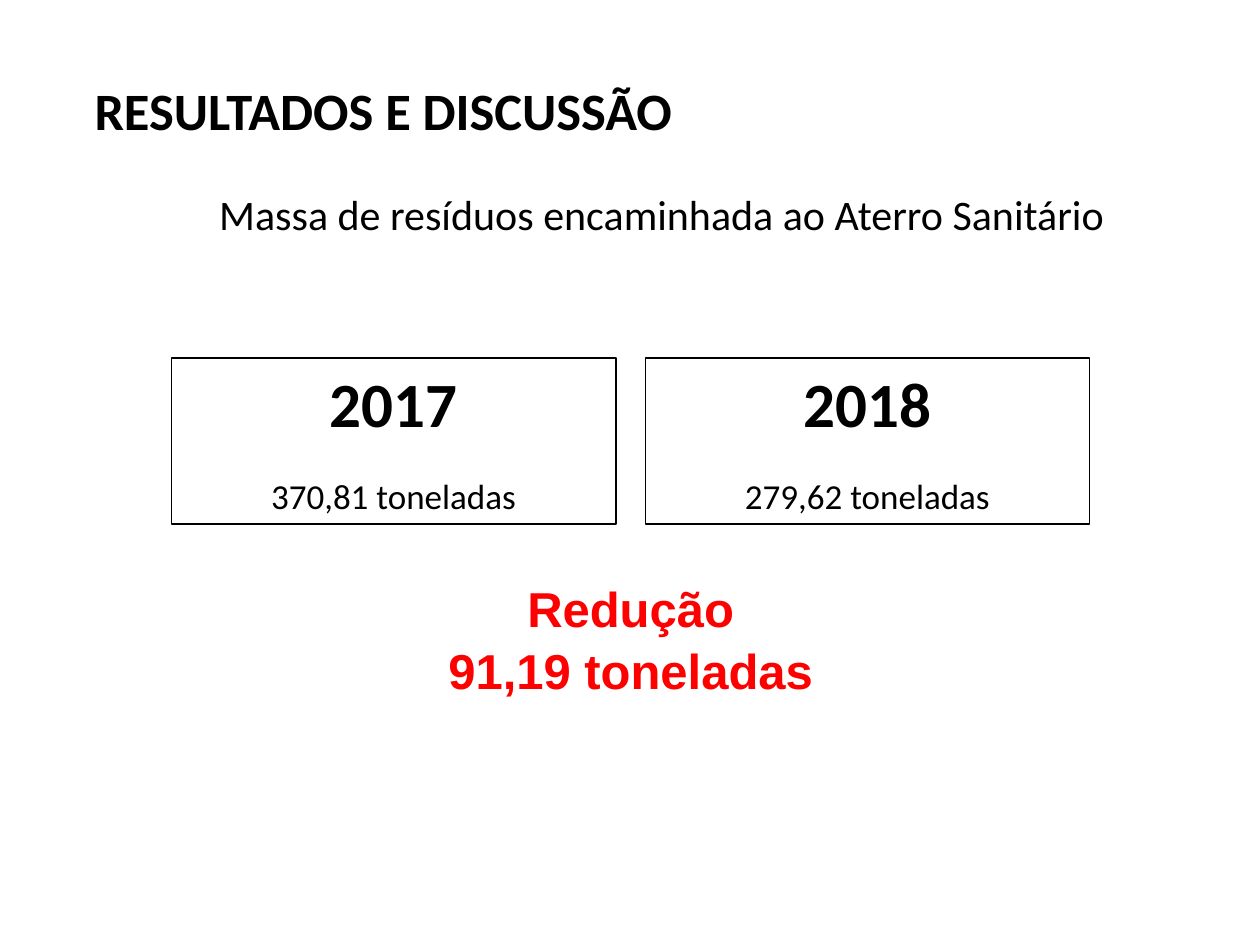
from pptx import Presentation
from pptx.dml.color import RGBColor
from pptx.enum.shapes import MSO_SHAPE
from pptx.enum.text import MSO_ANCHOR, PP_ALIGN
from pptx.util import Pt

BLACK = RGBColor(0x00, 0x00, 0x00)
WHITE = RGBColor(0xFF, 0xFF, 0xFF)
RED = RGBColor(0xFF, 0x00, 0x00)


def add_text(tf, text, first=True, size=24, bold=False, font="Calibri", color=BLACK,
             align=PP_ALIGN.CENTER, before=0, after=0, spacing=1.0):
    """Write one formatted paragraph into a text frame."""
    p = tf.paragraphs[0] if first else tf.add_paragraph()
    p.alignment = align
    p.space_before, p.space_after = Pt(before), Pt(after)
    p.line_spacing = spacing
    r = p.add_run()
    r.text = text
    r.font.name, r.font.size, r.font.bold = font, Pt(size), bold
    r.font.color.rgb = color


def add_box(slide, x, y, w, h):
    """Add a wrapping text box and return its text frame."""
    tf = slide.shapes.add_textbox(Pt(x), Pt(y), Pt(w), Pt(h)).text_frame
    tf.word_wrap = True
    return tf


def add_title(slide, x, y, w, h, text):
    """Place and format the title placeholder."""
    sp = slide.shapes.title
    sp.left, sp.top, sp.width, sp.height = Pt(x), Pt(y), Pt(w), Pt(h)
    sp.text_frame.vertical_anchor = MSO_ANCHOR.MIDDLE
    add_text(sp.text_frame, text, size=30, bold=True, align=PP_ALIGN.LEFT)


def add_subtitle(slide, x, y, w, h, text):
    """Add the centred, indented subtitle."""
    tf = add_box(slide, x, y, w, h)
    tf.margin_left = Pt(43.2)
    add_text(tf, text)


def add_year_card(slide, x, y, w, h, year, mass):
    """Add a framed card with a year above its mass."""
    sp = slide.shapes.add_shape(MSO_SHAPE.RECTANGLE, Pt(x), Pt(y), Pt(w), Pt(h))
    sp.shadow.inherit = False
    sp.fill.solid()
    sp.fill.fore_color.rgb = WHITE
    sp.line.color.rgb = BLACK
    sp.line.width = Pt(0.75)
    tf = sp.text_frame
    tf.word_wrap = True
    tf.vertical_anchor = MSO_ANCHOR.TOP
    add_text(tf, year, size=36, bold=True, after=10)
    add_text(tf, mass, first=False, size=20, before=10)


def add_cards(slide, x, y, w, h, cards, gap):
    """Lay out year cards of equal width in a row."""
    card_w = (w - gap * (len(cards) - 1)) / len(cards)
    for i, (year, mass) in enumerate(cards):
        add_year_card(slide, x + i * (card_w + gap), y, card_w, h, year, mass)


def add_reduction(slide, x, y, w, h, lines):
    """Add the highlighted reduction statement."""
    tf = add_box(slide, x, y, w, h)
    for i, line in enumerate(lines):
        add_text(tf, line, first=i == 0, size=28, bold=True, font="Arial",
                 color=RED, spacing=1.05)


def main():
    """Build and save the slide."""
    prs = Presentation()
    prs.slide_width, prs.slide_height = Pt(720), Pt(540)
    slide = prs.slides.add_slide(prs.slide_layouts[5])
    add_title(slide, 46.8, 40.3, 626.4, 44.6, "RESULTADOS E DISCUSSÃO")
    add_subtitle(slide, 54, 104.4, 612, 315.4,
                 "Massa de resíduos encaminhada ao Aterro Sanitário")
    add_cards(slide, 97.9, 204.5, 524.9, 95,
              [("2017", "370,81 toneladas"), ("2018", "279,62 toneladas")], gap=16.7)
    add_reduction(slide, 230.4, 325.4, 259.9, 74.9, ["Redução", "91,19 toneladas"])
    prs.save("out.pptx")


if __name__ == "__main__":
    main()
